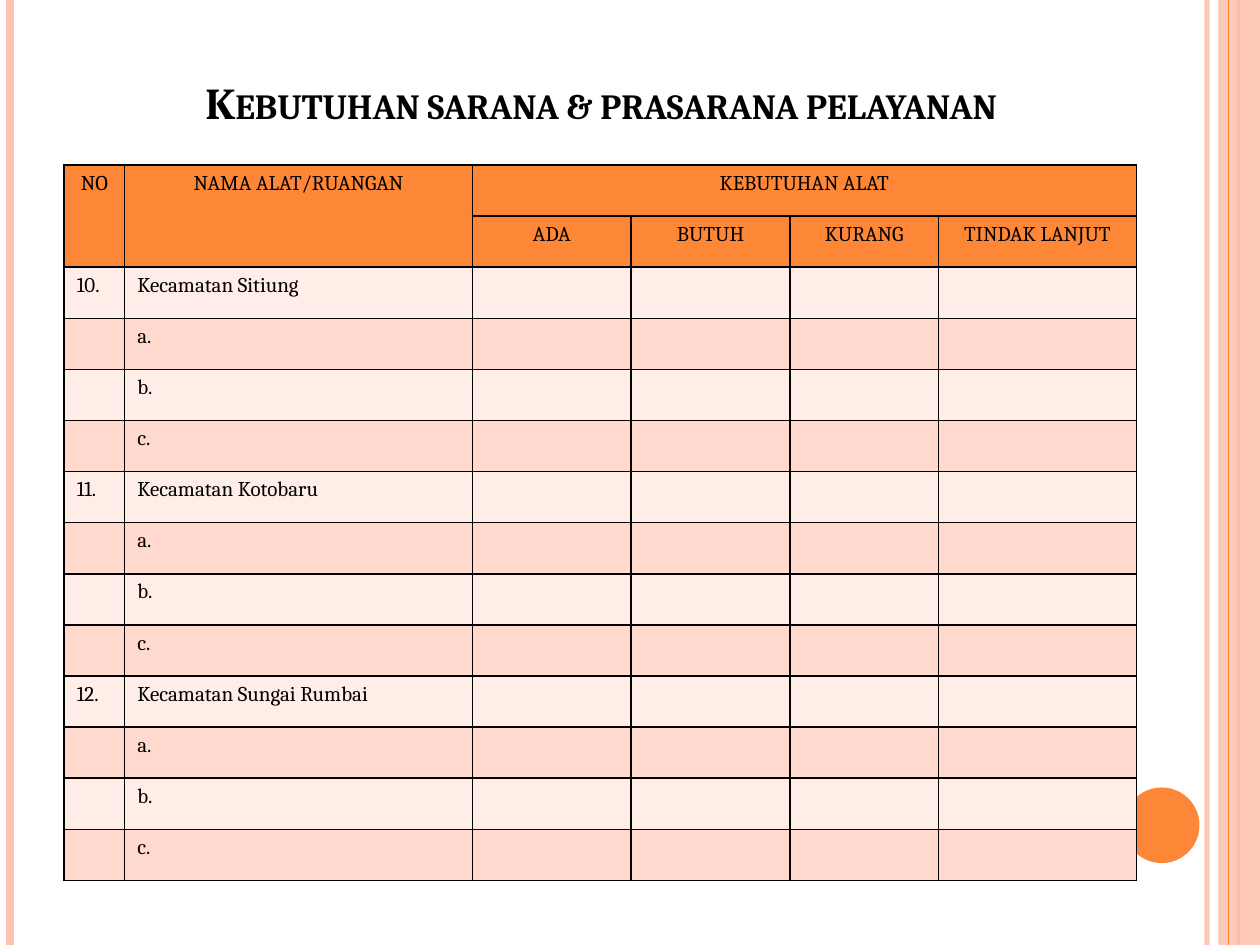
from lxml.etree import SubElement as Sub
from pptx import Presentation
from pptx.dml.color import RGBColor
from pptx.enum.shapes import MSO_CONNECTOR as Link, MSO_SHAPE as Shape
from pptx.enum.text import MSO_ANCHOR as Anchor, PP_ALIGN as Align
from pptx.oxml.ns import qn
from pptx.util import Inches, Pt

ORANGE, PEACH, BLACK = "FE8637", "FEC3AE", "000000"
BANDS = ["FFEDE8", "FFD9CE"]
FONT = "Cambria"
COLS = [0.48, 2.76, 1.26, 1.26, 1.18, 1.57]
HEADS = [
    ["NO", "NAMA ALAT/RUANGAN", "KEBUTUHAN ALAT", "", "", ""],
    ["", "", "ADA", "BUTUH", "KURANG", "TINDAK LANJUT"],
]
AREAS = [("10.", "Sitiung"), ("11.", "Kotobaru"), ("12.", "Sungai Rumbai")]
ITEMS = ["a.", "b.", "c."]


def paint(color, value):
    color.rgb = RGBColor.from_string(value)


def fade(fill, percent):
    tint = fill._xPr.find(".//" + qn("a:srgbClr"))
    Sub(tint, qn("a:alpha"), val=str(percent * 1000))


def style(par, size, align, bold=False):
    par.alignment = align
    for run in par.runs:
        font = run.font
        font.name, font.size, font.bold = FONT, Pt(size), bold
        paint(font.color, BLACK)


def add_rule(slide, x, top, height, color, width, alpha=100):
    rule = slide.shapes.add_connector(
        Link.STRAIGHT, Inches(x), Inches(top), Inches(x), Inches(top + height))
    paint(rule.line.color, color)
    rule.line.width = Pt(width)
    if alpha < 100:
        fade(rule.line.fill, alpha)
    Sub(rule._element.spPr, qn("a:effectLst"))


def add_solid(slide, kind, box, color, alpha=100):
    solid = slide.shapes.add_shape(kind, *map(Inches, box))
    solid.shadow.inherit = False
    solid.fill.solid()
    paint(solid.fill.fore_color, color)
    solid.line.fill.background()
    if alpha < 100:
        fade(solid.fill, alpha)


def add_frame(slide, box):
    left, top, width, height = box
    right = left + width
    add_rule(slide, right - 0.42, top, height, PEACH, 3, 93)
    add_rule(slide, left + 0.08, top, height, PEACH, 4.5)
    add_rule(slide, right - 0.17, top, height, ORANGE, 1.5)
    add_solid(slide, Shape.RECTANGLE, (right - 0.33, top, 0.33, height), PEACH, 87)
    add_rule(slide, right - 0.25, top, height, ORANGE, 0.75)
    add_solid(slide, Shape.OVAL, (right - 1.08, top + 6.25, 0.6, 0.6), ORANGE)


def add_title(slide, box):
    frame = slide.shapes.add_textbox(*map(Inches, box)).text_frame
    frame.word_wrap = True
    frame.vertical_anchor = Anchor.BOTTOM
    frame.text = "Kebutuhan sarana & prasarana pelayanan"
    par = frame.paragraphs[0]
    style(par, 25.2, Align.CENTER, True)
    par.runs[0].font._element.set("cap", "small")


def add_border(cell):
    props = cell._tc.get_or_add_tcPr()
    for side in ("lnL", "lnR", "lnT", "lnB"):
        line = Sub(props, qn("a:" + side), w=str(Pt(1)))
        Sub(Sub(line, qn("a:solidFill")), qn("a:srgbClr"), val=BLACK)


def list_rows():
    rows = list(HEADS)
    for number, area in AREAS:
        rows.append([number, "Kecamatan " + area])
        rows += [["", item] for item in ITEMS]
    return [row + [""] * (len(COLS) - len(row)) for row in rows]


def add_needs(slide, box):
    rows = list_rows()
    table = slide.shapes.add_table(len(rows), len(COLS), *map(Inches, box)).table
    for col, width in zip(table.columns, COLS):
        col.width = Inches(width)
    for r, row in enumerate(rows):
        head = r < len(HEADS)
        table.rows[r].height = Inches(box[3] / len(rows))
        for c, text in enumerate(row):
            cell = table.cell(r, c)
            add_border(cell)
            cell.fill.solid()
            paint(cell.fill.fore_color, ORANGE if head else BANDS[r % 2])
            cell.text_frame.text = text
            style(cell.text_frame.paragraphs[0], 12, Align.CENTER if head else Align.LEFT)
    for c in (0, 1):
        table.cell(0, c).merge(table.cell(1, c))
    table.cell(0, 2).merge(table.cell(0, 5))


def main():
    deck = Presentation()
    deck.slide_width, deck.slide_height = Inches(10), Inches(7.5)
    slide = deck.slides.add_slide(deck.slide_layouts[6])
    add_frame(slide, (0, 0, 10, 7.5))
    add_title(slide, (0.28, 0.3, 8.98, 0.77))
    add_needs(slide, (0.51, 1.31, 8.52, 5.68))
    deck.save("out.pptx")


if __name__ == "__main__":
    main()
